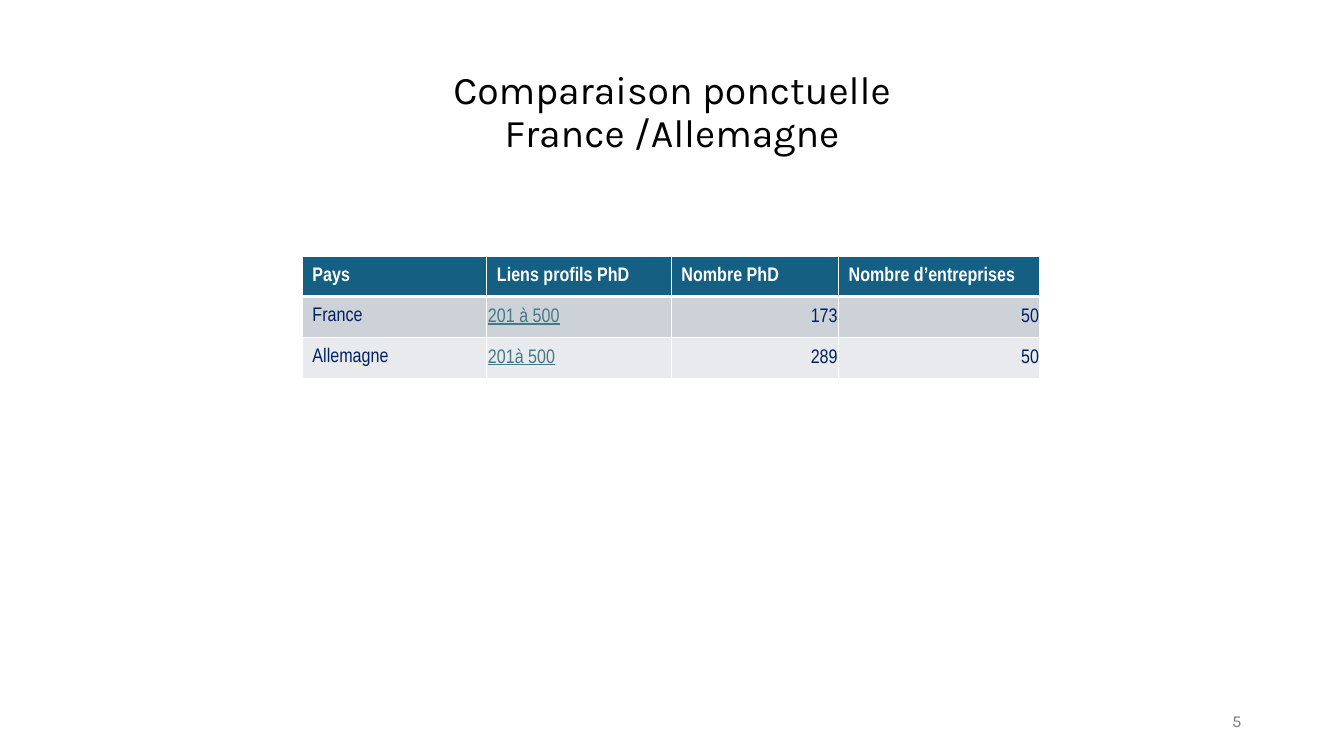
import pptx
import pptx.dml.color
import pptx.enum.text
import pptx.oxml.ns
import pptx.util
from lxml import etree

Pt = pptx.util.Pt
RGB = pptx.dml.color.RGBColor.from_string
ALIGN = pptx.enum.text.PP_ALIGN
MIDDLE = pptx.enum.text.MSO_ANCHOR.MIDDLE
COLORS = {
    "title": "000000",
    "header": "156082",
    "header_text": "FFFFFF",
    "border": "FFFFFF",
    "band_dark": "CCD2D8",
    "band_light": "E8EAED",
    "text": "002060",
    "link": "467886",
    "number": "797979",
}


def style_paragraph(paragraph, font_name, size, color, align):
    paragraph.alignment = align
    paragraph.font.name = font_name
    paragraph.font.size = Pt(size)
    paragraph.font.color.rgb = RGB(COLORS[color])


def add_border(cell, side, width):
    """Draw one side (L, R, T or B) of a cell; call before filling the cell."""
    properties = cell._tc.get_or_add_tcPr()
    line = etree.SubElement(properties, pptx.oxml.ns.qn(f"a:ln{side}"), w=str(Pt(width)))
    fill = etree.SubElement(line, pptx.oxml.ns.qn("a:solidFill"))
    etree.SubElement(fill, pptx.oxml.ns.qn("a:srgbClr"), val=COLORS["border"])


presentation = pptx.Presentation()
presentation.slide_width = Pt(960)
presentation.slide_height = Pt(540)
slide = presentation.slides.add_slide(presentation.slide_layouts[5])

# Title
title = slide.shapes.title
title.left, title.top, title.width, title.height = Pt(66), Pt(28.75), Pt(828), Pt(104.4)
title.text_frame.text = "Comparaison ponctuelle\vFrance /Allemagne"
title.text_frame.vertical_anchor = MIDDLE
title_paragraph = title.text_frame.paragraphs[0]
title_paragraph.line_spacing = 0.9
style_paragraph(title_paragraph, "Karla", 28, "title", ALIGN.CENTER)

# Comparison table
rows = [
    ["Pays", "Liens profils PhD", "Nombre PhD", "Nombre d’entreprises"],
    ["France", "201 à 500", "173", "50"],
    ["Allemagne", "201à 500", "289", "50"],
]
row_fills = ["header", "band_dark", "band_light"]
column_widths = [131.8, 131.8, 119.5, 143.9]
row_heights = [28.8, 29.2, 29.2]

table = slide.shapes.add_table(
    len(rows), len(column_widths), Pt(216), Pt(182.9), Pt(sum(column_widths)), Pt(sum(row_heights))
).table
table.horz_banding = False
for column, width in zip(table.columns, column_widths):
    column.width = Pt(width)
for row, height in zip(table.rows, row_heights):
    row.height = Pt(height)

for row_index, values in enumerate(rows):
    is_header = row_index == 0
    for column_index, value in enumerate(values):
        cell = table.cell(row_index, column_index)
        is_link = not is_header and column_index == 1
        is_number = not is_header and column_index > 1
        for side in "LRTB":
            thick = (is_header and side == "B") or (row_index == 1 and side == "T")
            add_border(cell, side, 3 if thick else 1)
        cell.fill.solid()
        cell.fill.fore_color.rgb = RGB(COLORS[row_fills[row_index]])
        cell.vertical_anchor = MIDDLE
        if is_link or is_number:
            cell.margin_left = cell.margin_right = cell.margin_top = Pt(0.75)
            cell.margin_bottom = Pt(0)
        cell.text = value
        paragraph = cell.text_frame.paragraphs[0]
        color = "header_text" if is_header else "link" if is_link else "text"
        style_paragraph(paragraph, "Arial Narrow", 14, color, ALIGN.RIGHT if is_number else ALIGN.LEFT)
        paragraph.font.bold = is_header
        paragraph.font.underline = is_link

# Slide number
number_box = slide.shapes.add_textbox(Pt(678), Pt(500.5), Pt(216), Pt(28.75))
number_box.text_frame.word_wrap = True
number_box.text_frame.vertical_anchor = MIDDLE
number_box.text_frame.text = "5"
style_paragraph(number_box.text_frame.paragraphs[0], "Karla", 12, "number", ALIGN.RIGHT)

presentation.save("out.pptx")
